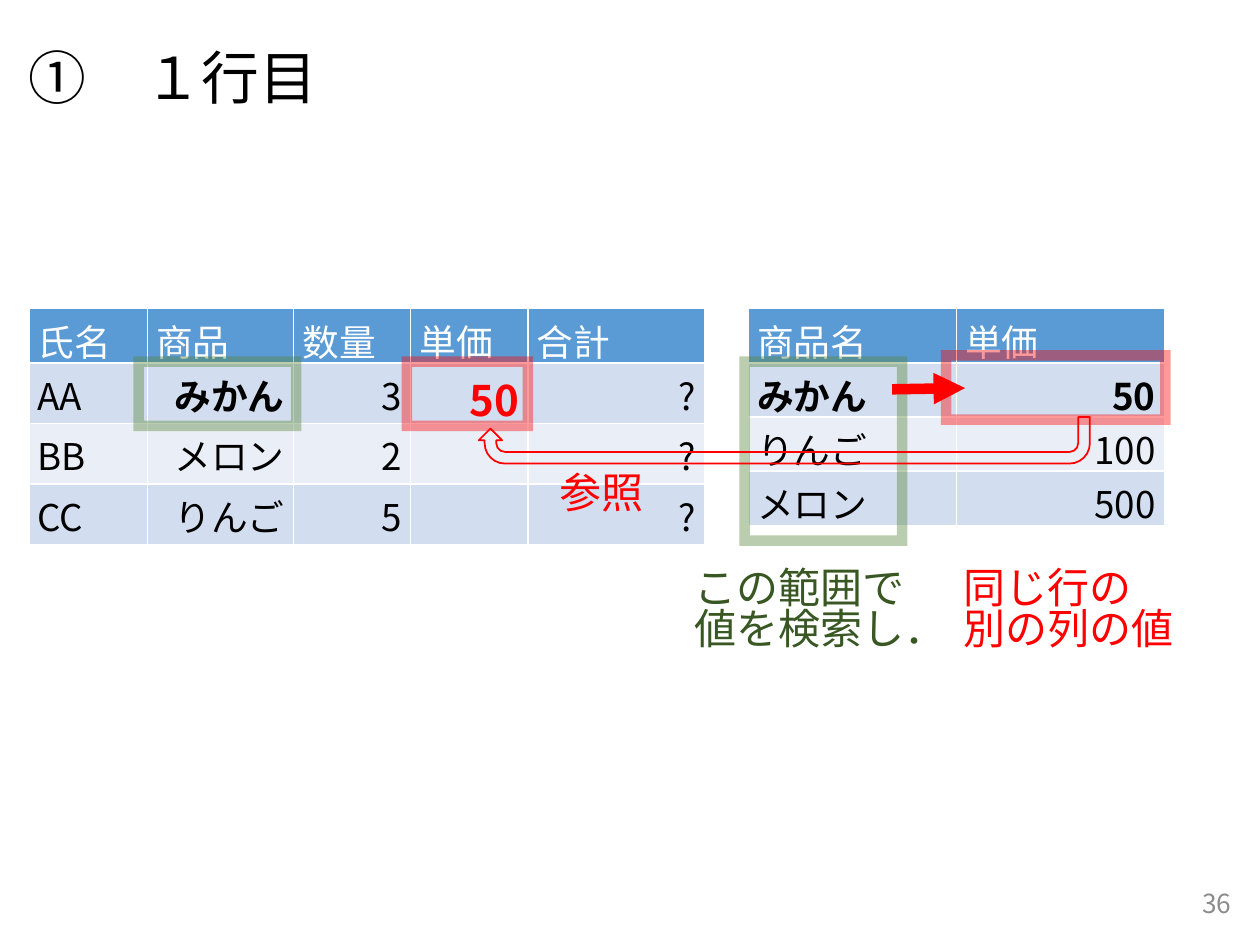
from lxml.etree import SubElement as Sub
from pptx import Presentation
from pptx.dml.color import RGBColor as RGB
from pptx.enum.shapes import MSO_CONNECTOR as Conn, MSO_SHAPE as Kind
from pptx.enum.text import MSO_ANCHOR as Anchor, PP_ALIGN as Align
from pptx.oxml.ns import qn
from pptx.util import Inches, Pt

NOTO = "Noto Sans CJK JP"
RED, GREEN = "FF0000", "548235"


def hue(fmt, code):
    """Set the colour of a font, fill or line format."""
    if hasattr(fmt, "solid"):
        fmt.solid()
        fmt = fmt.fore_color
    else:
        fmt = fmt.color
    fmt.rgb = RGB.from_string(code)


def say(frame, text, size, code, para={}, bold=False, face=NOTO):
    """Write lines of text, one paragraph each."""
    look = {"size": Pt(size), "name": face, "bold": bold}
    for i, line in enumerate(text.split("\n")):
        p = frame.add_paragraph() if i else frame.paragraphs[0]
        for key, val in para.items():
            setattr(p, key, val)
        run = p.add_run()
        run.text = line
        for key, val in look.items():
            setattr(run.font, key, val)
        hue(run.font, code)
        Sub(run.font._element, qn("a:ea"), typeface=NOTO)


prs = Presentation()
prs.slide_width, prs.slide_height = Inches(10), Inches(7.5)
slide = prs.slides.add_slide(prs.slide_layouts[6])
shapes = slide.shapes

# Title and page number
heads = [
    ((0.13, 0.21, 9.65, 0.86), "①\u3000１行目".replace("\u3000", "　"), 33,
     "000000", {"line_spacing": 0.9}, "Cabin"),
    ((7.62, 6.97, 2.25, 0.4), "36", 15, "8C8C8C", {"alignment": Align.RIGHT}, NOTO),
]
for at, text, size, code, para, face in heads:
    frame = shapes.add_textbox(*map(Inches, at)).text_frame
    frame.word_wrap = True
    frame.vertical_anchor = Anchor.MIDDLE
    say(frame, text, size, code, para, face=face)

# Price list and order tables: place, columns, rows, bold cells
prices = [("商品名", "単価"), ("みかん", "50"), ("りんご", "100"), ("メロン", "500")]
orders = [
    ("氏名", "商品", "数量", "単価", "合計"),
    ("AA", "みかん", "3", "50", "?"),
    ("BB", "メロン", "2", "", "?"),
    ("CC", "りんご", "5", "", "?"),
]
tables = [
    (5.94, [1.65, 1.65], 0.42, prices, {(1, 0), (1, 1)}, None),
    (0.23, [0.94, 1.16, 0.93, 0.93, 1.4], 0.47, orders, {(1, 1), (1, 3)}, (1, 3)),
]
for left, cols, high, rows, bolds, found in tables:
    grid = shapes.add_table(len(rows), len(cols), Inches(left), Inches(2.45),
                            Inches(sum(cols)), Inches(0.42 + 3 * high)).table
    for c, wide in enumerate(cols):
        grid.columns[c].width = Inches(wide)
    for r, row in enumerate(rows):
        grid.rows[r].height = Inches(high if r else 0.42)
        for c, text in enumerate(row):
            cell = grid.cell(r, c)
            hue(cell.fill, ("D2DEEF" if r % 2 else "EAEFF7") if r else "5B9BD5")
            cell.margin_left = cell.margin_right = Inches(0.07)
            cell.margin_top = cell.margin_bottom = Inches(0.04)
            if not text:
                # An empty cell keeps the height of the large price
                end = Sub(cell.text_frame.paragraphs[0]._p, qn("a:endParaRPr"), sz="2400")
                for tag in ("a:latin", "a:ea"):
                    Sub(end, qn(tag), typeface=NOTO)
                continue
            big = (r, c) == found
            code = RED if big else "000000" if r else "FFFFFF"
            para = {"alignment": Align.RIGHT if r and c else Align.LEFT}
            say(cell.text_frame, text, 24 if big else 21, code, para, (r, c) in bolds)

# Translucent frames around the cells
frames = [
    ((7.51, 2.82, 1.74, 0.51), RED),
    ((3.23, 2.87, 0.96, 0.51), RED),
    ((1.1, 2.87, 1.25, 0.51), GREEN),
    ((5.91, 2.87, 1.25, 1.42), GREEN),
]
for at, code in frames:
    box = shapes.add_shape(Kind.RECTANGLE, *map(Inches, at))
    box.shadow.inherit = False
    box.fill.background()
    hue(box.line, code)
    box.line.width = Pt(6)
    ln = box.line._ln
    Sub(ln.find(".//" + qn("a:srgbClr")), qn("a:alpha"), val="40000")
    Sub(ln, qn("a:miter"), lim="800000")

# Arrow from the name to its price
link = shapes.add_connector(Conn.STRAIGHT, *map(Inches, (7.08, 3.09, 7.66, 3.08)))
hue(link.line, RED)
link.line.width = Pt(6)
Sub(link.line._ln, qn("a:tailEnd"), type="triangle")
Sub(link._element.spPr, qn("a:effectLst"))

# Return arrow from the price list to the order
turn = shapes.add_shape(Kind.U_TURN_ARROW, *map(Inches, (3.8, 3.31, 4.85, 0.37)))
turn.shadow.inherit = False
turn.fill.background()
hue(turn.line, RED)
turn.line.width = Pt(1)
for key in ("flipH", "flipV"):
    turn._element.spPr.xfrm.set(key, "1")

# Notes beside the tables
notes = [
    ((5.41, 4.44, 2.22, 0.91), "この範囲で\n値を検索し．", "385723"),
    ((7.55, 4.44, 1.88, 0.91), "同じ行の\n別の列の値", RED),
    ((4.34, 3.69, 0.88, 0.5), "参照", RED),
]
for at, text, code in notes:
    frame = shapes.add_textbox(*map(Inches, at)).text_frame
    frame.word_wrap = False
    frame.margin_top = Inches(0.08)
    say(frame, text, 24, code, {"line_spacing": 0.83})

prs.save("out.pptx")
